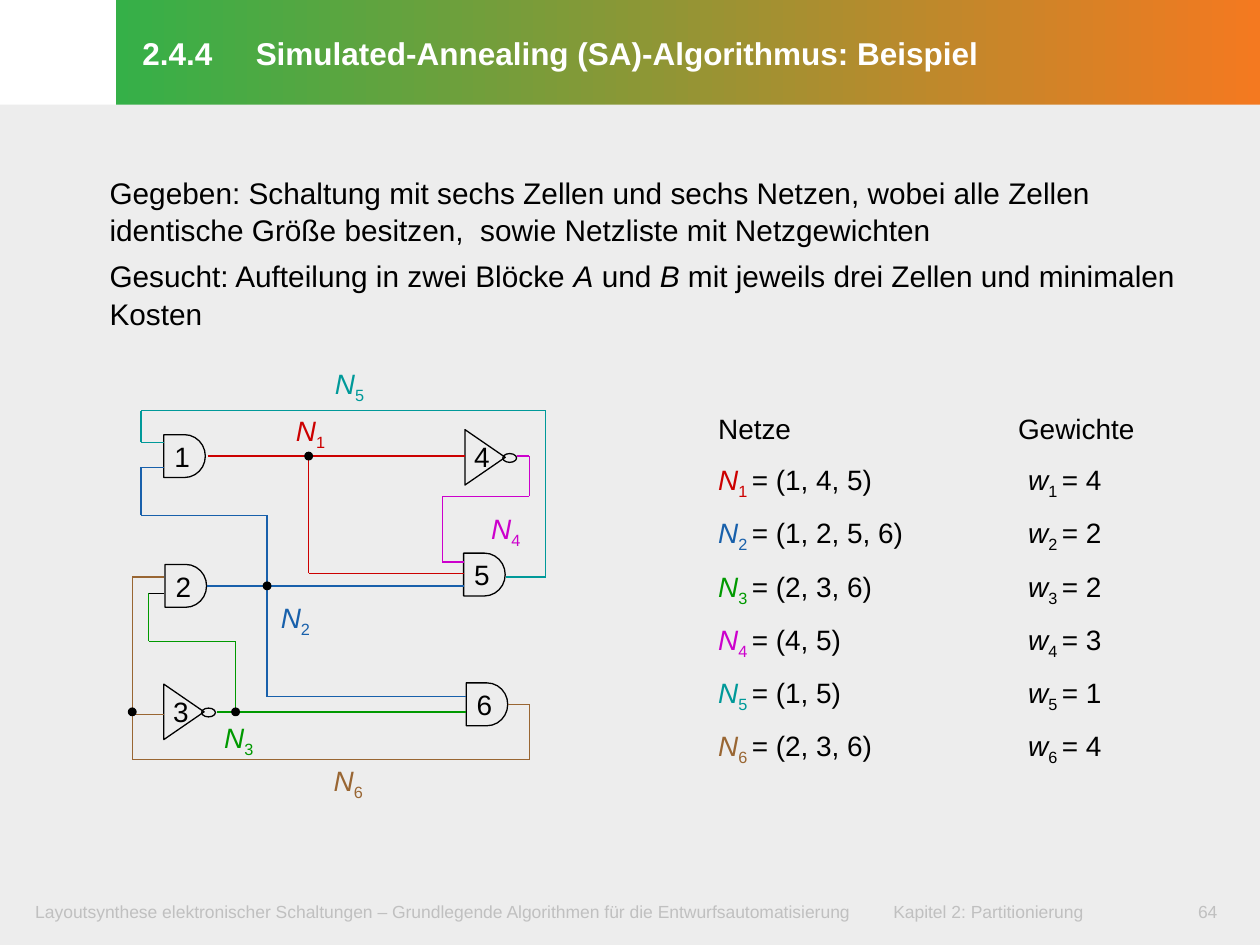
from itertools import pairwise

from lxml import etree
from pptx import Presentation
from pptx.dml.color import RGBColor
from pptx.enum.shapes import MSO_CONNECTOR as CONN, MSO_SHAPE as SHAPE
from pptx.enum.text import MSO_ANCHOR as ANCHOR, MSO_AUTO_SIZE as AUTO, PP_ALIGN as ALIGN
from pptx.oxml.ns import qn
from pptx.util import Inches, Pt

BLACK = RGBColor(0x00, 0x00, 0x00)
WHITE = RGBColor(0xFF, 0xFF, 0xFF)
PANEL = RGBColor(0xED, 0xED, 0xED)
FOOTER = RGBColor(0xC0, 0xC0, 0xC0)
GREEN = RGBColor(0x35, 0xB0, 0x48)
ORANGE = RGBColor(0xF4, 0x79, 0x20)
NET_COLORS = [
    RGBColor(0xCC, 0x00, 0x00), RGBColor(0x18, 0x60, 0xAB), RGBColor(0x00, 0x99, 0x00),
    RGBColor(0xCC, 0x00, 0xCC), RGBColor(0x00, 0x99, 0x99), RGBColor(0x99, 0x66, 0x33),
]

# Per net: cells, weight, label position and wires, relative to the circuit box
NETS = [
    ("(1, 4, 5)", 4, (1.25, 0.43),
     [[(0.65, 0.82), (2.69, 0.82)], [(1.45, 0.82), (1.45, 1.75), (2.68, 1.75)]]),
    ("(1, 2, 5, 6)", 2, (1.13, 1.92),
     [[(0.64, 1.85), (2.68, 1.85)],
      [(0.3, 0.91), (0.12, 0.91), (0.12, 1.29), (1.12, 1.29), (1.12, 2.73), (2.7, 2.73)]]),
    ("(2, 3, 6)", 2, (0.68, 2.87),
     [[(0.72, 2.85), (2.7, 2.85)],
      [(0.87, 2.85), (0.87, 2.29), (0.18, 2.29), (0.18, 1.91)]]),
    ("(4, 5)", 3, (2.8, 1.21),
     [[(3.1, 0.82), (3.2, 0.82), (3.2, 1.14), (2.51, 1.14), (2.51, 1.66), (2.68, 1.66)]]),
    ("(1, 5)", 1, (1.56, 0.06),
     [[(0.3, 0.71), (0.12, 0.71), (0.12, 0.46), (3.33, 0.46), (3.33, 1.78), (3.02, 1.78)]]),
    ("(2, 3, 6)", 4, (1.55, 3.21),
     [[(3.03, 2.79), (3.2, 2.79), (3.2, 3.23), (0.05, 3.23), (0.05, 1.78), (0.3, 1.78)],
      [(0.3, 2.87), (0.05, 2.87)]]),
]
GATES = {"1": (0.3, 0.65), "2": (0.31, 1.68), "5": (2.68, 1.59), "6": (2.7, 2.62)}
INVERTERS = {"4": (2.69, 0.61), "3": (0.3, 2.63)}
JUNCTIONS = [(0.87, 2.85), (1.12, 1.85), (0.05, 2.85), (1.45, 0.82)]


def add_run(p, text, size, color=BLACK, italic=False, bold=False, sub=False):
    r = p.add_run()
    r.text = text
    f = r.font
    f.name, f.size, f.bold, f.italic = "Arial", Pt(size), bold, italic
    f.color.rgb = color
    if sub:
        r._r.get_or_add_rPr().set("baseline", "-25000")


def add_tab(p, pos):
    tabs = etree.SubElement(p._p.get_or_add_pPr(), qn("a:tabLst"))
    etree.SubElement(tabs, qn("a:tab"), pos=str(Inches(pos)), algn="l")


def set_insets(tf, left, top, right, bottom):
    tf.margin_left, tf.margin_top = Inches(left), Inches(top)
    tf.margin_right, tf.margin_bottom = Inches(right), Inches(bottom)


def add_text(slide, x, y, w, h, insets=(0.1, 0.05, 0.1, 0.05), wrap=True):
    tf = slide.shapes.add_textbox(Inches(x), Inches(y), Inches(w), Inches(h)).text_frame
    tf.word_wrap = wrap
    set_insets(tf, *insets)
    return tf


def add_shape(slide, kind, x, y, w, h, fill=None, line=None):
    sp = slide.shapes.add_shape(kind, Inches(x), Inches(y), Inches(w), Inches(h))
    sp.shadow.inherit = False
    for part, color in ((sp.fill, fill), (sp.line.fill, line)):
        if color is None:
            part.background()
        else:
            part.solid()
            part.fore_color.rgb = color
    if line is not None:
        sp.line.width = Pt(0.75)
    return sp


def add_wire(slide, x, y, points, color):
    for (x1, y1), (x2, y2) in pairwise(points):
        c = slide.shapes.add_connector(
            CONN.STRAIGHT, Inches(x + x1), Inches(y + y1), Inches(x + x2), Inches(y + y2))
        c.line.color.rgb = color
        c.line.width = Pt(0.75)
        etree.SubElement(c._element.spPr, qn("a:effectLst"))


def add_title(slide, x, y, w, h):
    sp = slide.shapes.title
    sp.left, sp.top, sp.width, sp.height = Inches(x), Inches(y), Inches(w), Inches(h)
    sp.fill.gradient()
    sp.fill.gradient_angle = 0
    for stop, color, pos in zip(sp.fill.gradient_stops, (GREEN, ORANGE), (0, 1)):
        stop.color.rgb = color
        stop.position = pos
    tf = sp.text_frame
    tf.auto_size, tf.vertical_anchor, tf.word_wrap = AUTO.NONE, ANCHOR.MIDDLE, True
    set_insets(tf, 0.21, 0.05, 0.1, 0.07)
    p = tf.paragraphs[0]
    p.alignment, p.line_spacing = ALIGN.LEFT, Pt(23.5)
    add_tab(p, 0.9)
    add_run(p, "2.4.4\tSimulated-Annealing (SA)-Algorithmus: Beispiel", 18, WHITE, bold=True)


def add_footer(slide, x, y, w, h):
    number_w = 0.59
    insets = (0.12, 0.06, 0.12, 0.06)
    p = add_text(slide, x, y, w - number_w, h, insets).paragraphs[0]
    add_tab(p, 6.81)
    add_run(p, "Layoutsynthese elektronischer Schaltungen – Grundlegende Algorithmen "
               "für die Entwurfsautomatisierung\tKapitel 2: Partitionierung", 10, FOOTER)
    p = add_text(slide, x + w - number_w, y, number_w, h, insets).paragraphs[0]
    p.alignment = ALIGN.CENTER
    add_run(p, "64", 10, FOOTER)


def add_task(slide, x, y, w, h):
    tf = add_text(slide, x, y, w, h, (0.21, 0.05, 0.1, 0.07))
    given, wanted = tf.paragraphs[0], tf.add_paragraph()
    given.line_spacing = wanted.line_spacing = 1.05
    wanted.space_before = Pt(5)
    add_run(given, "Gegeben: Schaltung mit sechs Zellen und sechs Netzen, wobei alle Zellen "
                   "identische Größe besitzen,  sowie Netzliste mit Netzgewichten", 17)
    for text, italic in (("Gesucht: Aufteilung in zwei Blöcke ", False), ("A", True),
                         (" und ", False), ("B", True),
                         (" mit jeweils drei Zellen und minimalen Kosten", False)):
        add_run(wanted, text, 17, italic=italic)


def add_net_list(slide, x, y, w, h):
    row_h = h / (len(NETS) + 1)
    net_w, weight_w = 2.46, 1.32

    def add_cell(cx, row, cw):
        tf = add_text(slide, cx, y + row * row_h, cw, row_h, (0.11, 0.05, 0.11, 0.05))
        tf.vertical_anchor = ANCHOR.MIDDLE
        p = tf.paragraphs[0]
        p.line_spacing = 1.02
        return p

    add_run(add_cell(x, 0, net_w), "Netze", 16)
    add_run(add_cell(x + w - weight_w - 0.08, 0, weight_w), "Gewichte", 16)
    for n, ((cells, weight, *_), color) in enumerate(zip(NETS, NET_COLORS), 1):
        for cx, cw, name, value, c in ((x, net_w, "N", cells, color),
                                       (x + w - weight_w, weight_w, "w", weight, BLACK)):
            p = add_cell(cx, n, cw)
            add_run(p, name, 16, c, italic=True)
            add_run(p, f"{n} ", 16, c, sub=True)
            add_run(p, f"= {value}", 16)


def add_cell_number(slide, x, y, number):
    p = add_text(slide, x, y, 0.39, 0.37).paragraphs[0]
    p.alignment = ALIGN.CENTER
    add_run(p, number, 16)


def add_circuit(slide, x, y):
    # Gates
    for number, (gx, gy) in GATES.items():
        add_shape(slide, SHAPE.FLOWCHART_DELAY, x + gx, y + gy, 0.33, 0.34, line=BLACK)
        add_cell_number(slide, x + gx - 0.05, y + gy - 0.01, number)
    # Inverters: a triangle turned to the right and its output bubble
    for number, (ix, iy) in INVERTERS.items():
        tri = add_shape(slide, SHAPE.ISOSCELES_TRIANGLE, x + ix - 0.06, y + iy + 0.06,
                        0.44, 0.32, line=BLACK)
        tri.rotation = 90
        add_shape(slide, SHAPE.OVAL, x + ix + 0.3, y + iy + 0.19, 0.11, 0.07, line=BLACK)
        add_cell_number(slide, x + ix - 0.06, y + iy + 0.03, number)
    # Wires and net labels
    for n, ((_, _, (lx, ly), wires), color) in enumerate(zip(NETS, NET_COLORS), 1):
        for points in wires:
            add_wire(slide, x, y, points, color)
        p = add_text(slide, x + lx, y + ly, 0.45, 0.37, wrap=False).paragraphs[0]
        add_run(p, "N", 16, color, italic=True)
        add_run(p, str(n), 16, color, sub=True)
    add_wire(slide, x, y, [(0.18, 1.91), (0.3, 1.91)], BLACK)
    # Junction dots
    for jx, jy in JUNCTIONS:
        add_shape(slide, SHAPE.OVAL, x + jx - 0.03, y + jy - 0.03, 0.06, 0.06, BLACK, BLACK)


def main():
    prs = Presentation()
    prs.slide_width, prs.slide_height = Inches(10), Inches(7.5)
    slide = prs.slides.add_slide(prs.slide_layouts[5])
    add_shape(slide, SHAPE.RECTANGLE, 0, 0.83, 10, 6.67, fill=PANEL)
    add_title(slide, 0.92, 0, 9.08, 0.83)
    add_footer(slide, 0.16, 7.09, 9.72, 0.32)
    add_task(slide, 0.66, 1.32, 9, 1.34)
    add_net_list(slide, 5.59, 3.19, 3.78, 2.95)
    add_circuit(slide, 1, 2.8)
    prs.save("out.pptx")


if __name__ == "__main__":
    main()
